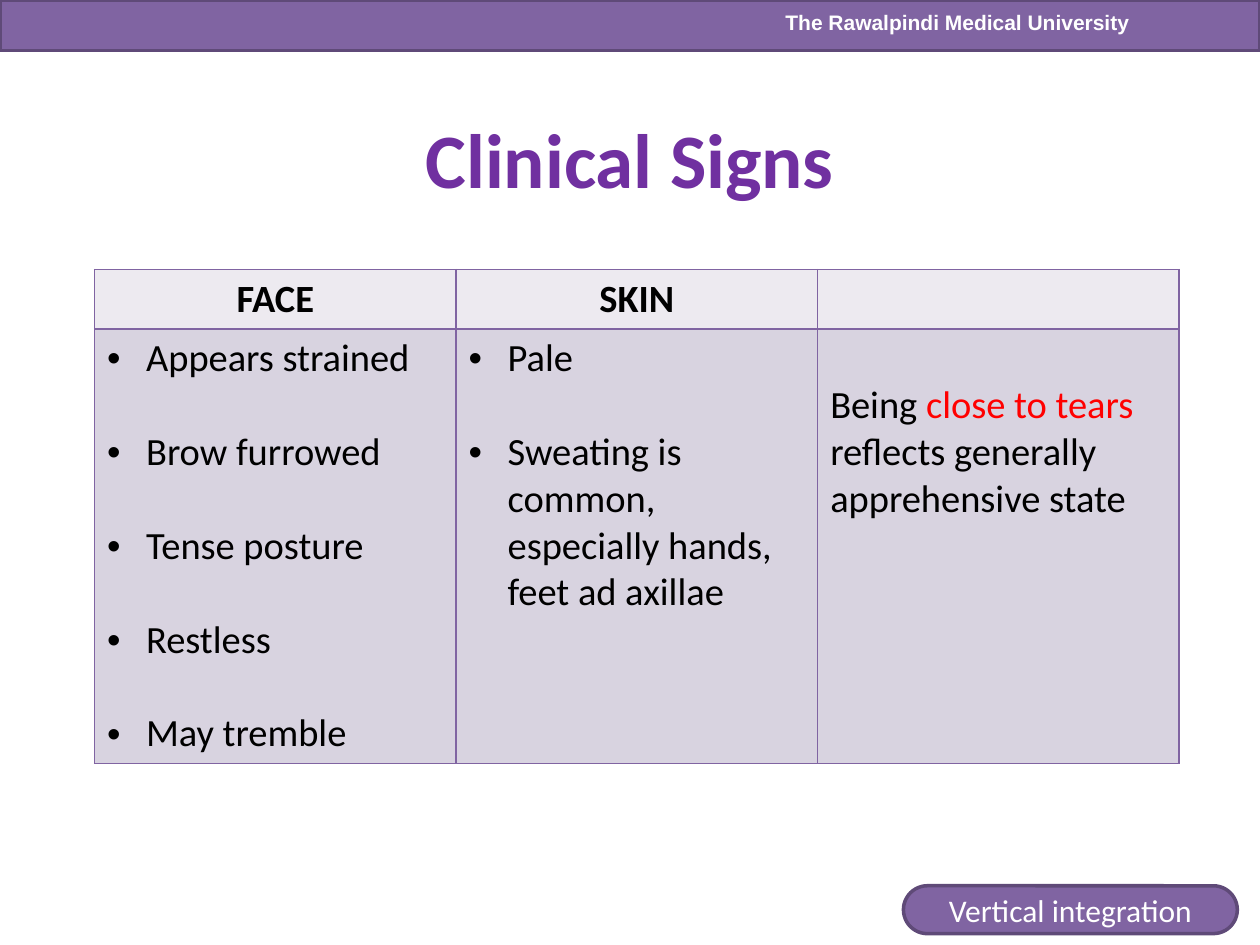
import pptx
import pptx.dml.color
import pptx.enum.shapes
import pptx.enum.text
import pptx.oxml
import pptx.oxml.ns
import pptx.util
from lxml import etree

PURPLE, DARK_PURPLE, BLACK, WHITE, RED = "8064A2", "5F4A78", "000000", "FFFFFF", "FF0000"
LINE_HEIGHT = pptx.util.Pt(26.84)
CENTER = pptx.enum.text.PP_ALIGN.CENTER
MIDDLE = pptx.enum.text.MSO_ANCHOR.MIDDLE


def paint(color_format, color):
    color_format.rgb = pptx.dml.color.RGBColor.from_string(color)


def write(paragraph, runs, size, bold=False, name="Calibri"):
    for text, color in runs:
        run = paragraph.add_run()
        run.text = text
        values = {"name": name, "size": pptx.util.Pt(size), "bold": bold}
        for attribute, value in values.items():
            setattr(run.font, attribute, value)
        paint(run.font.color, color)


presentation = pptx.Presentation()
presentation.slide_width = width = pptx.util.Inches(10)
presentation.slide_height = height = pptx.util.Inches(7.5)
slide = presentation.slides.add_slide(presentation.slide_layouts[5])

shapes = []
for kind, left, top, share_width, share_height in [
    ("RECTANGLE", 0, 0, 1, 0.4 / 7.5),
    ("ROUNDED_RECTANGLE", 0.717, 7.03 / 7.5, 0.265, 0.38 / 7.5),
]:
    shape = slide.shapes.add_shape(
        getattr(pptx.enum.shapes.MSO_SHAPE, kind),
        int(width * left), int(height * top),
        int(width * share_width), int(height * share_height))
    shape.shadow.inherit = False
    shape.fill.solid()
    paint(shape.fill.fore_color, PURPLE)
    paint(shape.line.color, DARK_PURPLE)
    shape.line.width = pptx.util.Pt(2)
    shapes.append(shape)

badge = shapes[1]
badge.adjustments[0] = 0.5
badge.text_frame.vertical_anchor = MIDDLE
badge.text_frame.paragraphs[0].alignment = CENTER
write(badge.text_frame.paragraphs[0], [("Vertical integration", WHITE)], 18)

university = slide.shapes.add_textbox(
    int(width * 0.612), int(height * 0.004), int(width * 0.296), int(height * 0.04))
university.text_frame.word_wrap = False
university.text_frame.paragraphs[0].alignment = CENTER
write(university.text_frame.paragraphs[0],
      [("The Rawalpindi Medical University", WHITE)], 12, True, "Arial")

title = slide.shapes.title
placement = {"left": width * 0.05, "top": height * 0.8 / 7.5,
             "width": width * 0.9, "height": height * 0.91 / 7.5}
for attribute, value in placement.items():
    setattr(title, attribute, int(value))
title.text_frame.vertical_anchor = MIDDLE
title.text_frame.paragraphs[0].alignment = CENTER
write(title.text_frame.paragraphs[0], [("Clinical Signs", "7030A0")], 44, True)

headings = ["FACE", "SKIN", ""]
signs = [
    ["Appears strained", "Brow furrowed", "Tense posture", "Restless", "May tremble"],
    ["Pale", "Sweating is common, especially hands, feet ad axillae"],
    [],
]
remark = [("Being ", BLACK), ("close to tears ", RED),
          ("reflects generally apprehensive state", BLACK)]

table = slide.shapes.add_table(
    2, 3, int(width * 0.075), int(height * 2.14 / 7.5),
    int(width * 0.861), int(height * 3.92 / 7.5)).table
table.first_row = table.horz_banding = False
for row, share in zip(table.rows, [0.47, 3.45]):
    row.height = int(height * share / 7.5)

for row_index, fill in enumerate(["EDEAF0", "D8D3E0"]):
    for column_index in range(3):
        cell = table.cell(row_index, column_index)
        properties = cell._tc.get_or_add_tcPr()
        for side in ["lnL", "lnR", "lnT", "lnB"]:
            border = etree.SubElement(properties, pptx.oxml.ns.qn(f"a:{side}"), w="12700")
            solid = etree.SubElement(border, pptx.oxml.ns.qn("a:solidFill"))
            etree.SubElement(solid, pptx.oxml.ns.qn("a:srgbClr"), val=PURPLE)
        cell.fill.solid()
        paint(cell.fill.fore_color, fill)

for column_index, heading in enumerate(headings):
    if heading:
        paragraph = table.cell(0, column_index).text_frame.paragraphs[0]
        paragraph.alignment = CENTER
        write(paragraph, [(heading, BLACK)], 22, True)

    frame = table.cell(1, column_index).text_frame
    for index, sign in enumerate(signs[column_index]):
        paragraph = frame.add_paragraph() if index else frame.paragraphs[0]
        if index:
            paragraph.space_before = LINE_HEIGHT
        properties = paragraph._p.get_or_add_pPr()
        indent = pptx.util.Inches(0.31)
        properties.set("marL", str(indent))
        properties.set("indent", str(-indent))
        etree.SubElement(properties, pptx.oxml.ns.qn("a:buFont"), typeface="Arial")
        etree.SubElement(properties, pptx.oxml.ns.qn("a:buChar"), char="•")
        write(paragraph, [(sign, BLACK)], 22)

remark_cell = table.cell(1, 2)
remark_cell.margin_top = pptx.util.Inches(0.05) + LINE_HEIGHT
write(remark_cell.text_frame.paragraphs[0], remark, 22)

presentation.save("out.pptx")
